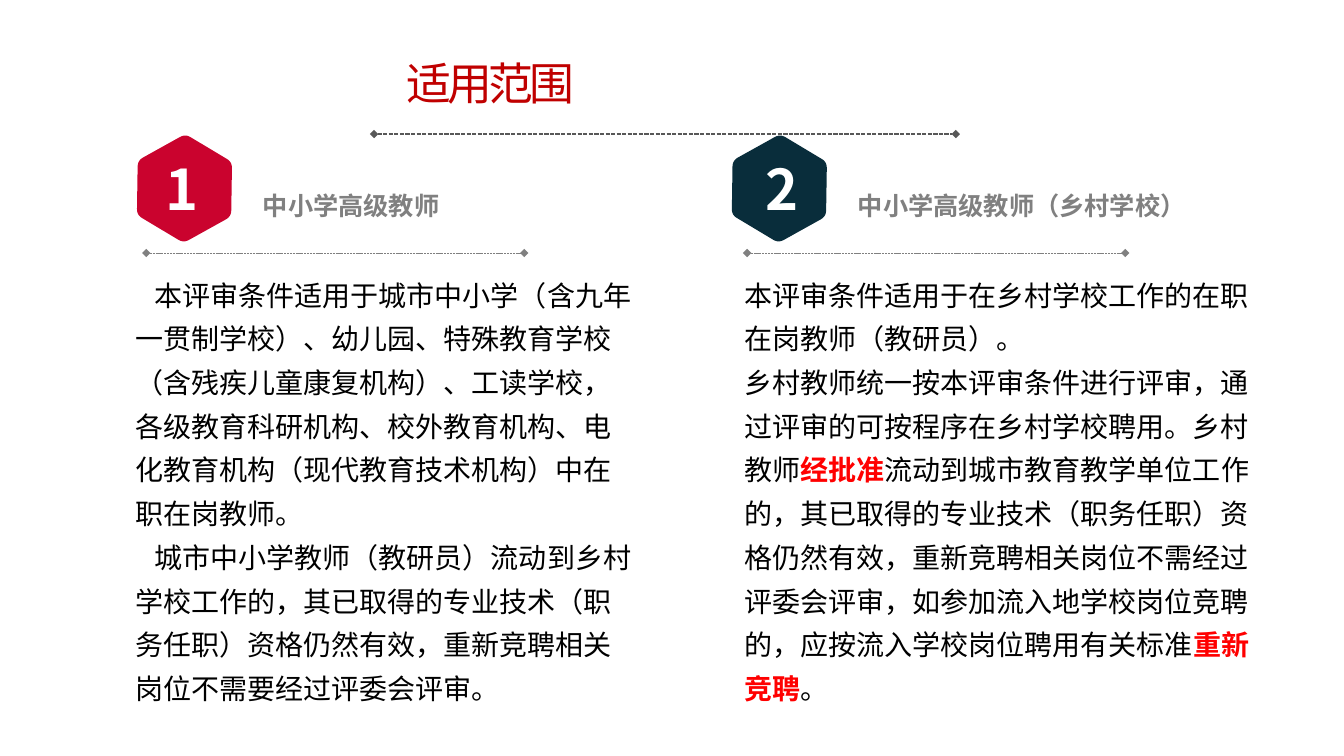
from dataclasses import dataclass
from math import cos, pi, sin

from lxml.etree import SubElement
from pptx import Presentation
from pptx.dml.color import RGBColor as Rgb
from pptx.enum.dml import MSO_LINE as Dash
from pptx.enum.shapes import MSO_CONNECTOR as Link
from pptx.enum.text import MSO_ANCHOR as Anchor, MSO_AUTO_SIZE as Fit, PP_ALIGN as Align
from pptx.oxml.ns import qn
from pptx.util import Inches, Pt

FONT = "Noto Sans CJK SC"
HUES = {
    "title": "C00000", "text": "000000", "mark": "FF0000", "grey": "808080",
    "dark": "585858", "white": "FFFFFF", "red": "CA032E", "navy": "092D3B",
}


@dataclass
class Run:
    text: str
    hue: str = "text"
    bold: bool = False


@dataclass
class Column:
    digit: str
    label: str
    hue: str
    hex_x: float
    digit_x: float
    rule_x: float
    body_x: float
    body_w: float
    label_w: float
    indent: float
    paras: list[list[Run]]


COLUMNS = [
    Column("1", "中小学高级教师", "red", 1.83, 1.54, 1.45, 1.24, 5.16, 1.97, 0.19, [
        [Run("本评审条件适用于城市中小学（含九年一贯制学校）、幼儿园、特殊教育学校"
             "（含残疾儿童康复机构）、工读学校，各级教育科研机构、校外教育机构、"
             "电化教育机构（现代教育技术机构）中在职在岗教师。")],
        [Run("城市中小学教师（教研员）流动到乡村学校工作的，其已取得的专业技术"
             "（职务任职）资格仍然有效，重新竞聘相关岗位不需要经过评委会评审。")],
    ]),
    Column("2", "中小学高级教师（乡村学校）", "navy", 7.73, 7.49, 7.41, 7.28, 5.31, 3.48, 0, [
        [Run("本评审条件适用于在乡村学校工作的在职在岗教师（教研员）。")],
        [Run("乡村教师统一按本评审条件进行评审，通过评审的可按程序在乡村学校聘用。乡村教师"),
         Run("经批准", "mark", True),
         Run("流动到城市教育教学单位工作的，其已取得的专业技术（职务任职）资格仍然有效，"
             "重新竞聘相关岗位不需经过评委会评审，如参加流入地学校岗位竞聘的，"
             "应按流入学校岗位聘用有关标准"),
         Run("重新竞聘", "mark", True),
         Run("。")],
    ]),
]


def color(hue: str) -> Rgb:
    return Rgb.from_string(HUES[hue])


def place(shape, x: float, y: float, w: float, h: float) -> None:
    shape.left, shape.top = Inches(x), Inches(y)
    shape.width, shape.height = Inches(w), Inches(h)


def write(para, run: Run, size: float, space: int = 0) -> None:
    part = para.add_run()
    part.text = run.text
    font = part.font
    font.size, font.bold, font.name = Pt(size), run.bold, FONT
    font.color.rgb = color(run.hue)
    props = part._r.get_or_add_rPr()
    SubElement(props, qn("a:ea")).set("typeface", FONT)
    if space:
        props.set("spc", str(space))


def add_text(slide, box: tuple, run: Run, size: float, wrap: bool, anchor: Anchor) -> None:
    shape = slide.shapes.add_textbox(*map(Inches, box))
    frame = shape.text_frame
    frame.word_wrap, frame.vertical_anchor = wrap, anchor
    frame.auto_size = Fit.SHAPE_TO_FIT_TEXT
    write(frame.paragraphs[0], run, size)


def add_rule(slide, x: float, y: float, w: float, hue: str, width: float) -> None:
    rule = slide.shapes.add_connector(
        Link.STRAIGHT, Inches(x), Inches(y), Inches(x + w), Inches(y))
    rule.line.color.rgb = color(hue)
    rule.line.width = Pt(width)
    rule.line.dash_style = Dash.SQUARE_DOT
    props = rule._element.spPr
    for end in ("a:headEnd", "a:tailEnd"):
        SubElement(props.find(qn("a:ln")), qn(end)).set("type", "diamond")
    SubElement(props, qn("a:effectLst"))


def add_hex(slide, x: float, y: float, hue: str) -> None:
    """Draw a slightly tilted hexagon with rounded corners."""
    size, cut, tilt, steps = 0.54, 0.11, pi / 200, 6
    peaks = [(x + size * sin(tilt + k * pi / 3), y - size * cos(tilt + k * pi / 3))
             for k in range(6)]
    dots = []
    for k, peak in enumerate(peaks):
        start, end = ([p + cut * (q - p) for p, q in zip(peak, near)]
                      for near in (peaks[k - 1], peaks[(k + 1) % 6]))
        for i in range(steps + 1):
            t = i / steps
            dots.append(tuple(
                Inches((1 - t) ** 2 * a + 2 * t * (1 - t) * p + t ** 2 * b)
                for a, p, b in zip(start, peak, end)))
    path = slide.shapes.build_freeform(*dots[0], scale=1.0)
    path.add_line_segments(dots[1:], close=True)
    shape = path.convert_to_shape()
    shape.shadow.inherit = False
    shape.fill.solid()
    shape.fill.fore_color.rgb = color(hue)
    shape.line.fill.background()


def fill_title(shape) -> None:
    place(shape, 3.68, 0.5, 5.44, 0.64)
    frame = shape.text_frame
    frame.vertical_anchor, frame.auto_size = Anchor.TOP, Fit.SHAPE_TO_FIT_TEXT
    frame.margin_left = Inches(0.35)
    para = frame.paragraphs[0]
    para.alignment = Align.LEFT
    write(para, Run("适用范围", "title"), 32, -270)


def fill_body(shape, col: Column) -> None:
    place(shape, col.body_x, 2.61, col.body_w, 4.48)
    frame = shape.text_frame
    frame.auto_size = Fit.SHAPE_TO_FIT_TEXT
    for k, runs in enumerate(col.paras):
        para = frame.add_paragraph() if k else frame.paragraphs[0]
        props = para._p.get_or_add_pPr()
        props.set("marL", "0")
        props.set("indent", str(Inches(col.indent)))
        SubElement(props, qn("a:buNone"))
        para.line_spacing = 1.3
        para.space_before = Pt(0)
        for run in runs:
            write(para, run, 20)


def main() -> None:
    deck = Presentation()
    deck.slide_width, deck.slide_height = Inches(13.33), Inches(7.5)
    slide = deck.slides.add_slide(deck.slide_layouts[3])

    # Heading
    title, *bodies = slide.placeholders
    fill_title(title)
    add_rule(slide, 3.71, 1.33, 5.77, "dark", 1)

    # Two columns
    for col, body in zip(COLUMNS, bodies):
        fill_body(body, col)
        add_hex(slide, col.hex_x, 1.87, col.hue)
        add_rule(slide, col.rule_x, 2.51, 3.75, "grey", 0.5)
        add_text(slide, (col.digit_x, 1.48, 0.41, 0.77),
                 Run(col.digit, "white", True), 40, True, Anchor.TOP)
        add_text(slide, (col.hex_x + 0.68, 1.84, col.label_w, 0.4),
                 Run(col.label, "grey", True), 18, False, Anchor.MIDDLE)

    deck.save("out.pptx")


if __name__ == "__main__":
    main()
